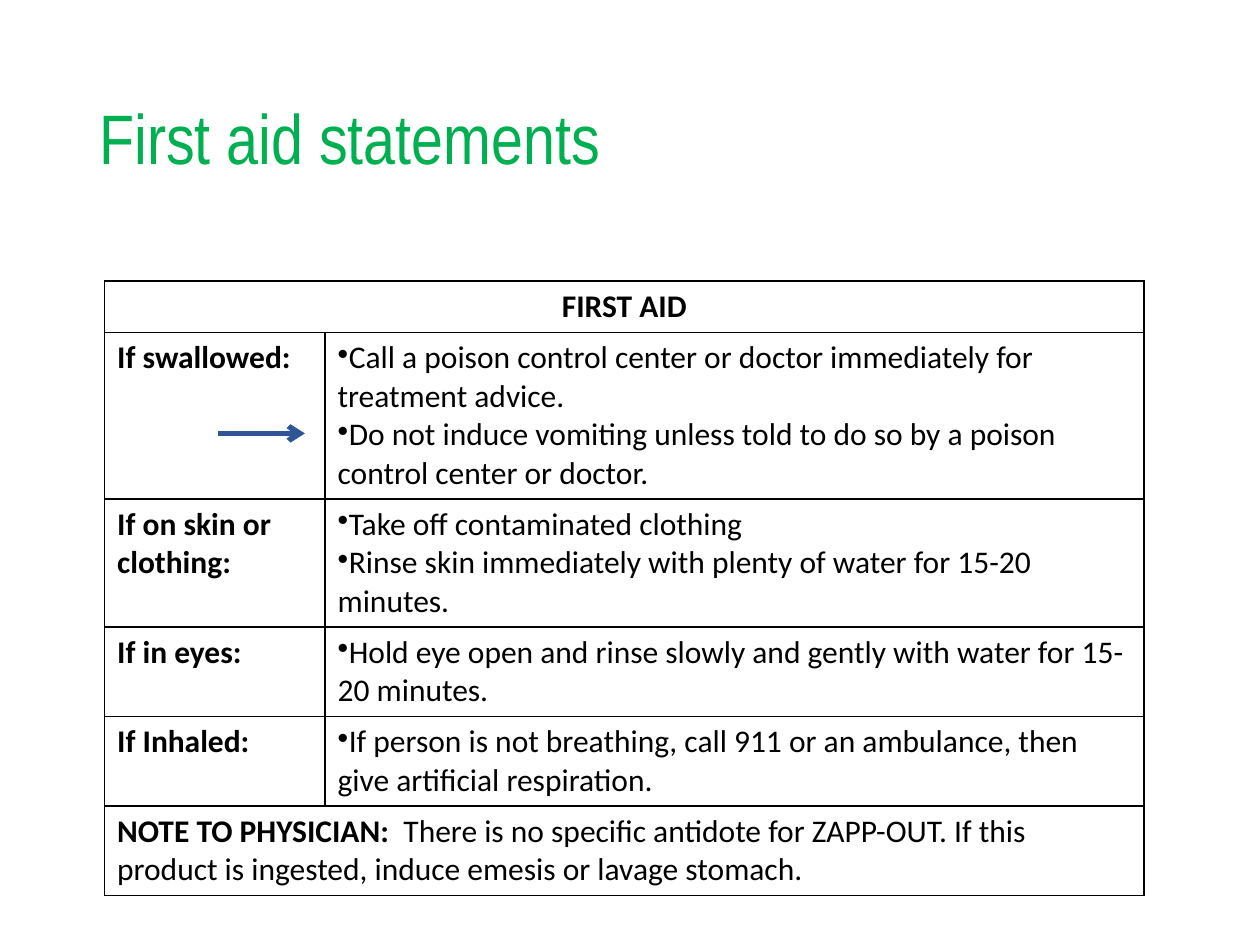
from lxml import etree
from pptx import Presentation
from pptx.dml.color import RGBColor
from pptx.enum.shapes import MSO_CONNECTOR
from pptx.enum.text import MSO_ANCHOR, PP_ALIGN
from pptx.oxml.ns import qn
from pptx.util import Inches, Pt

STRAIGHT = MSO_CONNECTOR.STRAIGHT
LEFT, CENTER, MIDDLE = PP_ALIGN.LEFT, PP_ALIGN.CENTER, MSO_ANCHOR.MIDDLE

# Content
TITLE = "First aid statements"
HEADING = "FIRST AID"
TREATMENTS = [
    ("If swallowed:", [
        "Call a poison control center or doctor immediately for treatment advice.",
        "Do not induce vomiting unless told to do so by a poison control center or doctor."]),
    ("If on skin or clothing:", [
        "Take off contaminated clothing",
        "Rinse skin immediately with plenty of water for 15-20 minutes."]),
    ("If in eyes:", [
        "Hold eye open and rinse slowly and gently with water for 15-20 minutes."]),
    ("If Inhaled:", [
        "If person is not breathing, call 911 or an ambulance, then give artificial respiration."]),
]
NOTE_LABEL = "NOTE TO PHYSICIAN:  "
NOTE = ("There is no specific antidote for ZAPP-OUT. If this product is ingested, "
        "induce emesis or lavage stomach.")

# Layout in inches
TITLE_BOX = (0.69, 0.4, 8.62, 1.45)
TABLE_LEFT, TABLE_TOP = 0.83, 2.23
COLUMNS = (1.75, 6.5)
ROW_HEIGHT = 0.41
ARROW_START, ARROW_END, ARROW_Y = 1.73, 2.42, 3.44


def color(value):
    return RGBColor.from_string(value)


def format_run(run, font, size, value, bold=False):
    run.font.name, run.font.size, run.font.bold = font, Pt(size), bold
    run.font.color.rgb = color(value)


def format_cell(cell):
    properties = cell._tc.get_or_add_tcPr()
    for side in ("a:lnL", "a:lnR", "a:lnT", "a:lnB"):
        line = etree.SubElement(properties, qn(side), w=str(Pt(1)))
        fill = etree.SubElement(line, qn("a:solidFill"))
        etree.SubElement(fill, qn("a:srgbClr"), val="000000")
    cell.fill.background()


def write_cell(cell, paragraphs, bold=False, bullets=False, alignment=LEFT):
    cell.text_frame.text = "\n".join(paragraphs)
    for paragraph in cell.text_frame.paragraphs:
        paragraph.alignment = alignment
        for run in paragraph.runs:
            format_run(run, "Calibri", 18, "000000", bold)
        if bullets:
            properties = paragraph._p.get_or_add_pPr()
            properties.set("marL", "0")
            properties.set("indent", "0")
            etree.SubElement(properties, qn("a:buChar"), char="•")


presentation = Presentation()
presentation.slide_width, presentation.slide_height = Inches(10), Inches(7.5)
slide = presentation.slides.add_slide(presentation.slide_layouts[5])

# Title
title = slide.shapes.title
title.left, title.top, title.width, title.height = map(Inches, TITLE_BOX)
title.text_frame.text = TITLE
title.text_frame.vertical_anchor = MIDDLE
paragraph = title.text_frame.paragraphs[0]
paragraph.alignment, paragraph.line_spacing = LEFT, 0.9
format_run(paragraph.runs[0], "Arial Narrow", 40, "00B050")

# Table: heading, one row per treatment, note
row_count = len(TREATMENTS) + 2
table = slide.shapes.add_table(
    row_count, len(COLUMNS), Inches(TABLE_LEFT), Inches(TABLE_TOP),
    Inches(sum(COLUMNS)), Inches(ROW_HEIGHT * row_count)).table
table.first_row = table.horz_banding = False
for column, width in zip(table.columns, COLUMNS):
    column.width = Inches(width)
for cell in table.iter_cells():
    format_cell(cell)
for row in (0, row_count - 1):
    table.cell(row, 0).merge(table.cell(row, 1))

write_cell(table.cell(0, 0), [HEADING], bold=True, alignment=CENTER)
for row, (situation, steps) in enumerate(TREATMENTS, start=1):
    write_cell(table.cell(row, 0), [situation], bold=True)
    write_cell(table.cell(row, 1), steps, bullets=True)
note_cell = table.cell(row_count - 1, 0)
write_cell(note_cell, [NOTE_LABEL], bold=True)
note_run = note_cell.text_frame.paragraphs[0].add_run()
note_run.text = NOTE
format_run(note_run, "Calibri", 18, "000000")

# Arrow to the vomiting advice
arrow = slide.shapes.add_connector(
    STRAIGHT, Inches(ARROW_START), Inches(ARROW_Y), Inches(ARROW_END), Inches(ARROW_Y))
arrow.line.color.rgb = color("2F5597")
arrow.line.width = Pt(3)
etree.SubElement(arrow.line._get_or_add_ln(), qn("a:tailEnd"), type="arrow")
etree.SubElement(arrow._element.spPr, qn("a:effectLst"))

presentation.save("out.pptx")
